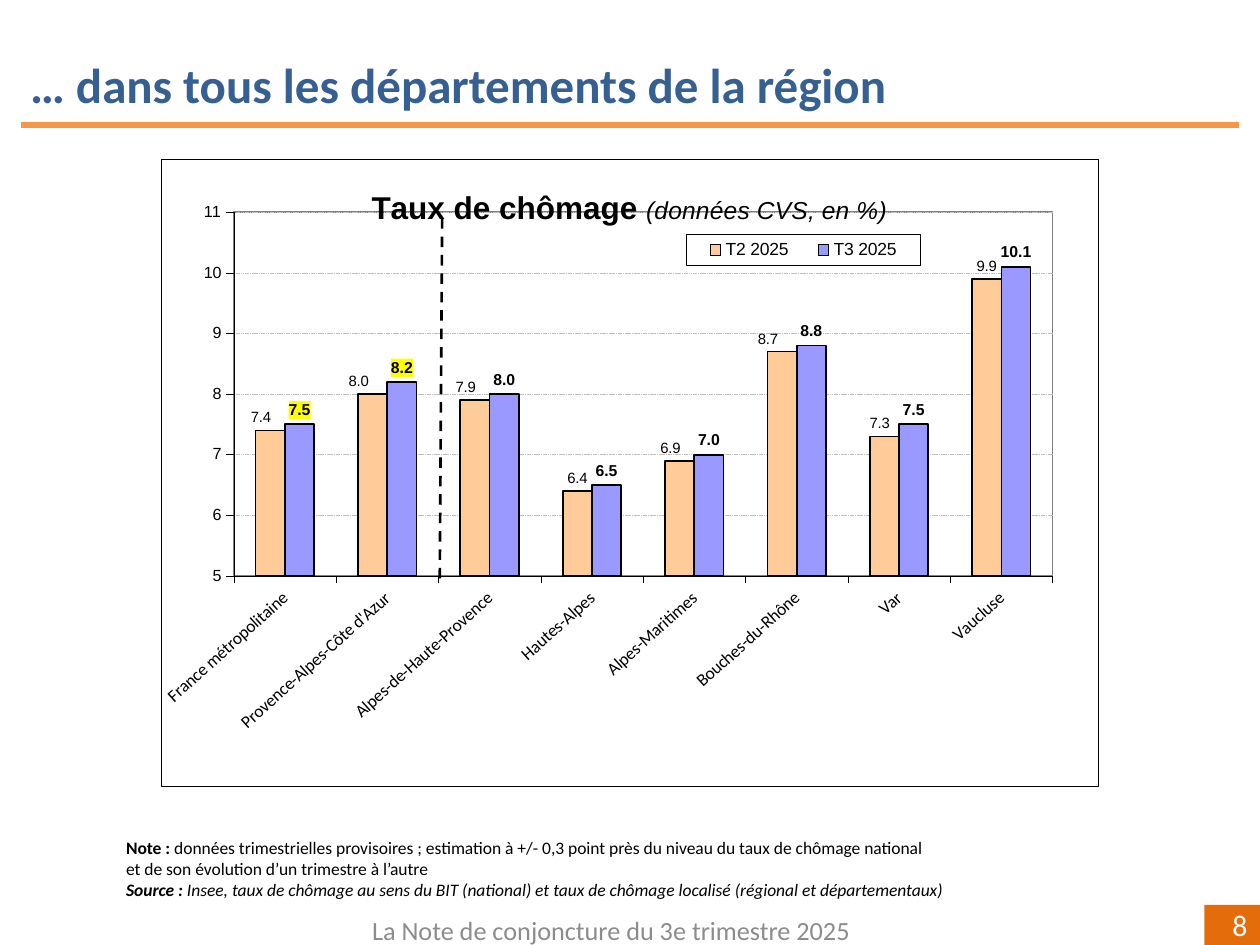
from dataclasses import dataclass, field
from typing import NamedTuple, Optional

from pptx import Presentation
from pptx.chart.data import CategoryChartData
from pptx.dml.color import RGBColor
from pptx.enum.chart import XL_CHART_TYPE, XL_LABEL_POSITION, XL_LEGEND_POSITION, XL_TICK_MARK
from pptx.enum.dml import MSO_LINE
from pptx.enum.shapes import MSO_CONNECTOR, MSO_SHAPE
from pptx.enum.text import MSO_ANCHOR, PP_ALIGN
from pptx.oxml import parse_xml
from pptx.oxml.ns import nsdecls, qn
from pptx.util import Pt

COLUMNS = XL_CHART_TYPE.COLUMN_CLUSTERED
ABOVE_BAR = XL_LABEL_POSITION.OUTSIDE_END
LEGEND_RIGHT = XL_LEGEND_POSITION.RIGHT
TICK_OUT = XL_TICK_MARK.OUTSIDE
DASH, FINE_DASH = MSO_LINE.DASH, MSO_LINE.SQUARE_DOT
STRAIGHT, RECTANGLE = MSO_CONNECTOR.STRAIGHT, MSO_SHAPE.RECTANGLE
TOP, MIDDLE = MSO_ANCHOR.TOP, MSO_ANCHOR.MIDDLE
LEFT, CENTER, RIGHT = PP_ALIGN.LEFT, PP_ALIGN.CENTER, PP_ALIGN.RIGHT


@dataclass(frozen=True)
class Theme:
    text_font: str = "Calibri"
    chart_font: str = "Arial"
    heading: str = "376092"
    rule: str = "F79646"
    badge: str = "E46C0A"
    footer: str = "8C8C8C"
    ink: str = "000000"
    paper: str = "FFFFFF"
    grid: str = "C0C0C0"
    plot_border: str = "808080"
    highlight: str = "FFFF00"
    previous: str = "FFCC99"
    current: str = "9999FF"
    heading_size: float = 28
    badge_size: float = 17
    footer_size: float = 15
    note_size: float = 10
    chart_title_size: float = 18
    chart_subtitle_size: float = 14
    category_size: float = 10
    value_size: float = 9.2
    legend_size: float = 10
    previous_label_size: float = 8.5
    current_label_size: float = 9


THEME = Theme()


class Box(NamedTuple):
    left: float
    top: float
    width: float
    height: float


class NoteLine(NamedTuple):
    lead: str
    text: str
    italic: bool = False


@dataclass
class Quarter:
    name: str
    rates: tuple
    color: str
    label_size: float
    bold: bool = False
    label_shifts: dict = field(default_factory=dict)
    highlighted: tuple = ()


AREAS = ("France métropolitaine", "Provence-Alpes-Côte d'Azur", "Alpes-de-Haute-Provence",
         "Hautes-Alpes", "Alpes-Maritimes", "Bouches-du-Rhône", "Var", "Vaucluse")
QUARTERS = (
    Quarter("T2 2025", (7.4, 8.0, 7.9, 6.4, 6.9, 8.7, 7.3, 9.9), THEME.previous,
            THEME.previous_label_size,
            label_shifts={0: -0.01, 1: -0.015, 2: -0.01, 4: -0.01, 5: -0.015, 6: -0.005}),
    Quarter("T3 2025", (7.5, 8.2, 8.0, 6.5, 7.0, 8.8, 7.5, 10.1), THEME.current,
            THEME.current_label_size, bold=True, highlighted=(0, 1)),
)
NOTES = (
    NoteLine("Note : ", "données trimestrielles provisoires ; estimation à +/- 0,3 point près "
                        "du niveau du taux de chômage national"),
    NoteLine("", "et de son évolution d’un trimestre à l’autre"),
    NoteLine("Source : ", "Insee, taux de chômage au sens du BIT (national) et taux de chômage "
                          "localisé (régional et départementaux)", True),
)


def rgb(color: str) -> RGBColor:
    return RGBColor.from_string(color)


def style_font(font, size: float, color: str, name: str = THEME.text_font,
               bold: Optional[bool] = None) -> None:
    font.size, font.name, font.bold = Pt(size), name, bold
    font.color.rgb = rgb(color)


def style_line(line, color: str, width: float, dash=None) -> None:
    line.color.rgb = rgb(color)
    line.width = Pt(width)
    if dash:
        line.dash_style = dash


def chart_frame(fill: str, border: str = "", width: float = 0.25):
    outline = (f'<a:ln w="{int(Pt(width))}"><a:solidFill><a:srgbClr val="{border}"/></a:solidFill></a:ln>'
               if border else "<a:ln><a:noFill/></a:ln>")
    return parse_xml(f'<c:spPr {nsdecls("c", "a")}><a:solidFill><a:srgbClr val="{fill}"/>'
                     f"</a:solidFill>{outline}</c:spPr>")


def manual_layout(inner: bool = False, edge: bool = True, **fractions: float):
    target = '<c:layoutTarget val="inner"/>' if inner else ""
    modes = '<c:xMode val="edge"/><c:yMode val="edge"/>' if edge else ""
    values = "".join(f'<c:{key} val="{value}"/>' for key, value in fractions.items())
    return parse_xml(f'<c:layout {nsdecls("c")}><c:manualLayout>{target}{modes}{values}'
                     "</c:manualLayout></c:layout>")


def replace_layout(parent, position: int, layout) -> None:
    for old in parent.findall(qn("c:layout")):
        parent.remove(old)
    parent.insert(position, layout)


def add_line(slide, start: tuple, end: tuple, color: str, width: float, dash=None) -> None:
    connector = slide.shapes.add_connector(STRAIGHT, *(Pt(v) for v in start + end))
    style_line(connector.line, color, width, dash)
    connector._element.spPr.append(parse_xml(f'<a:effectLst {nsdecls("a")}/>'))


def write_line(shape, text: str, size: float, color: str, align, anchor=MIDDLE,
               bold: Optional[bool] = None) -> None:
    frame = shape.text_frame
    frame.word_wrap, frame.vertical_anchor = True, anchor
    frame.text = text
    frame.paragraphs[0].alignment = align
    style_font(frame.paragraphs[0].font, size, color, bold=bold)


def add_heading(slide, box: Box, text: str) -> None:
    heading = slide.shapes.title
    heading.left, heading.top, heading.width, heading.height = (Pt(v) for v in box)
    write_line(heading, text, THEME.heading_size, THEME.heading, LEFT, TOP, True)


def add_notes(slide, box: Box) -> None:
    frame = slide.shapes.add_textbox(*(Pt(v) for v in box)).text_frame
    frame.word_wrap = True
    frame.margin_left, frame.margin_top = Pt(1.44), Pt(2.16)
    frame.margin_right = frame.margin_bottom = Pt(0)
    for index, note in enumerate(NOTES):
        paragraph = frame.add_paragraph() if index else frame.paragraphs[0]
        style_font(paragraph.font, THEME.note_size, THEME.ink)
        paragraph.font.italic = note.italic
        if note.lead:
            lead = paragraph.add_run()
            lead.text, lead.font.bold = note.lead, True
        paragraph.add_run().text = note.text


def style_quarter(series, quarter: Quarter) -> None:
    series.format.fill.solid()
    series.format.fill.fore_color.rgb = rgb(quarter.color)
    style_line(series.format.line, THEME.ink, 1)
    labels = series.data_labels
    labels.show_value, labels.position = True, ABOVE_BAR
    labels.number_format, labels.number_format_is_linked = "0.0", False
    style_font(labels.font, quarter.label_size, THEME.ink, THEME.chart_font, quarter.bold)
    for index in sorted({*quarter.label_shifts, *quarter.highlighted}):
        label = series.points[index].data_label
        style_font(label.font, quarter.label_size, THEME.ink, THEME.chart_font, quarter.bold)
        label.position = ABOVE_BAR
        element = next(item for item in labels._element.findall(qn("c:dLbl"))
                       if item.find(qn("c:idx")).get("val") == str(index))
        if index in quarter.label_shifts:
            replace_layout(element, 1, manual_layout(edge=False, x=quarter.label_shifts[index], y=0))
        if index in quarter.highlighted:
            for old in element.findall(qn("c:spPr")):
                element.remove(old)
            element.find(qn("c:txPr")).addprevious(chart_frame(THEME.highlight))


def style_axes(chart) -> None:
    values, areas = chart.value_axis, chart.category_axis
    values.minimum_scale, values.maximum_scale, values.major_unit = 5, 11, 1
    values.tick_labels.number_format = "0"
    values.tick_labels.number_format_is_linked = False
    style_line(values.major_gridlines.format.line, THEME.grid, 0.25, FINE_DASH)
    for axis, size, name in ((values, THEME.value_size, THEME.chart_font),
                             (areas, THEME.category_size, THEME.text_font)):
        axis.major_tick_mark = TICK_OUT
        style_line(axis.format.line, THEME.ink, 0.25)
        style_font(axis.tick_labels.font, size, THEME.ink, name)
    areas._element.find(qn("c:txPr")).find(qn("a:bodyPr")).set("rot", str(-42 * 60000))


def style_chart_title(chart) -> None:
    title = chart.chart_title
    paragraph = title.text_frame.paragraphs[0]
    for text, size, bold in (("Taux de chômage ", THEME.chart_title_size, True),
                             ("(données CVS, en %)", THEME.chart_subtitle_size, False)):
        run = paragraph.add_run()
        run.text, run.font.italic = text, not bold
        style_font(run.font, size, THEME.ink, THEME.chart_font, bold)
    replace_layout(title._element, 1, manual_layout(x=0.22, y=0.04))
    title._element.find(qn("c:overlay")).set("val", "1")


def style_legend(chart) -> None:
    chart.has_legend = True
    legend = chart.legend
    legend.position, legend.include_in_layout = LEGEND_RIGHT, False
    style_font(legend.font, THEME.legend_size, THEME.ink, THEME.chart_font)
    replace_layout(legend._element, 1, manual_layout(x=0.56, y=0.12, w=0.25, h=0.05))
    legend._element.find(qn("c:txPr")).addprevious(chart_frame(THEME.paper, THEME.ink))


def add_rates_chart(slide, box: Box) -> None:
    rates = CategoryChartData(number_format="0.0")
    rates.categories = AREAS
    for quarter in QUARTERS:
        rates.add_series(quarter.name, quarter.rates)
    chart = slide.shapes.add_chart(COLUMNS, *(Pt(v) for v in box), rates).chart
    style_font(chart.font, THEME.previous_label_size, THEME.ink, THEME.chart_font)
    plot = chart.plots[0]
    plot.gap_width, plot.overlap, plot.vary_by_categories = 150, 0, False
    for series, quarter in zip(plot.series, QUARTERS):
        style_quarter(series, quarter)
    style_axes(chart)
    style_chart_title(chart)
    style_legend(chart)
    plot_area = chart._chartSpace.chart.plotArea
    replace_layout(plot_area, 0, manual_layout(inner=True, x=0.077, y=0.085, w=0.874, h=0.58))
    plot_area.append(chart_frame(THEME.paper, THEME.plot_border, 1))
    chart._chartSpace.find(qn("c:txPr")).addprevious(chart_frame(THEME.paper, THEME.ink))


def main() -> None:
    deck = Presentation()
    deck.slide_width, deck.slide_height = Pt(720), Pt(540)
    slide = deck.slides.add_slide(deck.slide_layouts[5])
    add_heading(slide, Box(10, 27.4, 700, 41), "… dans tous les départements de la région")
    add_line(slide, (12.2, 71.4), (707.8, 71.4), THEME.rule, 3)
    badge = slide.shapes.add_shape(RECTANGLE, Pt(688.3), Pt(517), Pt(31.7), Pt(23))
    badge.shadow.inherit = False
    badge.fill.solid()
    badge.fill.fore_color.rgb = rgb(THEME.badge)
    badge.line.fill.background()
    write_line(badge, "8", THEME.badge_size, THEME.paper, RIGHT)
    footer = slide.shapes.add_textbox(Pt(173.5), Pt(517), Pt(351.4), Pt(28.8))
    write_line(footer, "La Note de conjoncture du 3e trimestre 2025",
               THEME.footer_size, THEME.footer, CENTER)
    add_notes(slide, Box(70.6, 476, 491.8, 38.2))
    add_rates_chart(slide, Box(92.2, 90.7, 535.7, 358.6))
    add_line(slide, (251.3, 330.5), (252.7, 122.4), THEME.ink, 1.5, DASH)
    deck.save("out.pptx")


if __name__ == "__main__":
    main()
